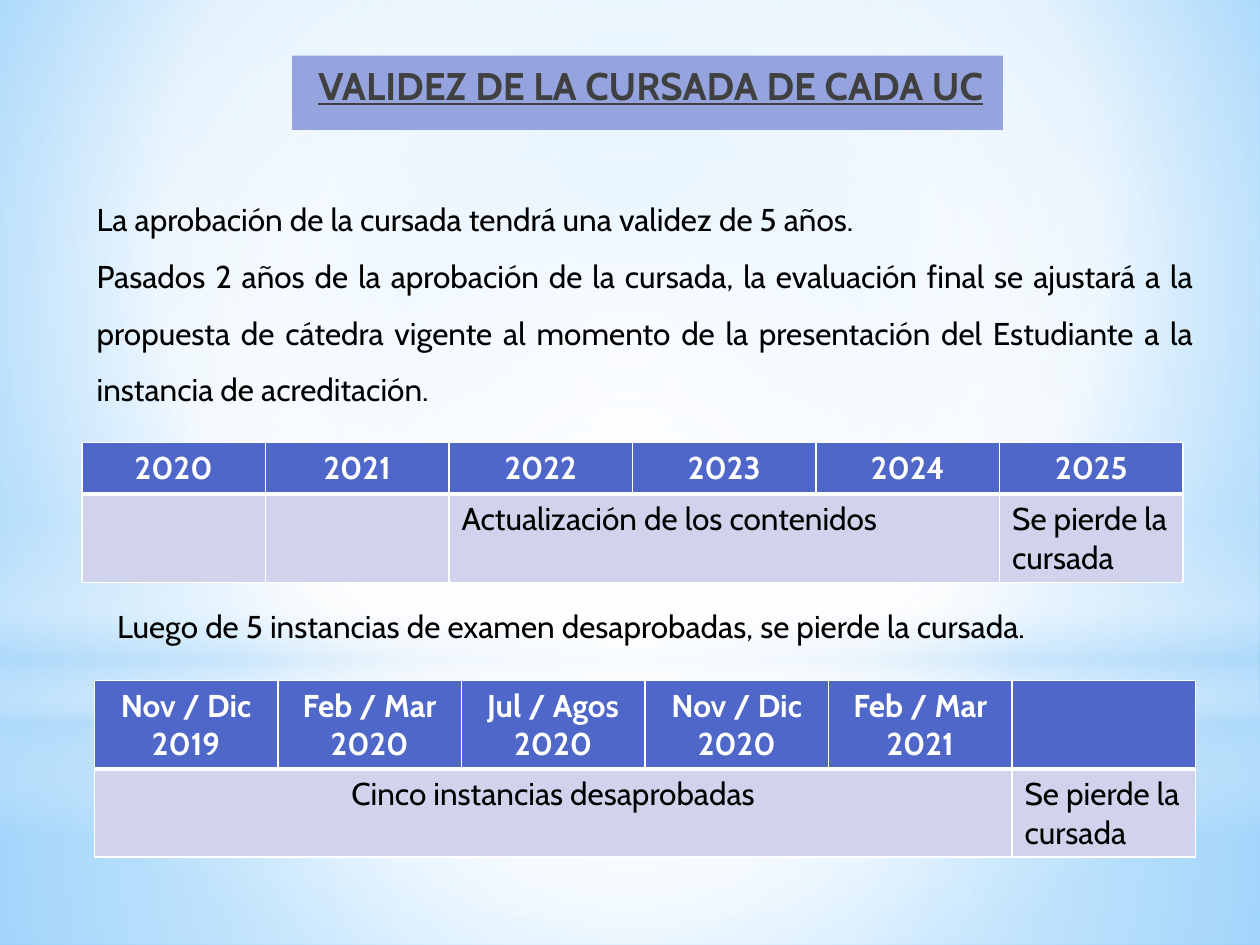
from lxml.etree import SubElement
from pptx import Presentation
from pptx.dml.color import RGBColor
from pptx.enum.shapes import MSO_SHAPE as Preset
from pptx.enum.text import MSO_ANCHOR as Anchor, MSO_AUTO_SIZE as AutoSize, PP_ALIGN as Align
from pptx.oxml.ns import qn
from pptx.util import Cm, Pt

WIDTH, HEIGHT = 25.4, 19.05
HORIZON = 14.17
CENTER = (50, 50, 50, 50)
COLUMN = 3.7


def color(hex_text):
    return RGBColor.from_string(hex_text)


def set_gradient(parent, stops, focus=None, angle=90):
    """Fill in stops of (position, colour, opacity); focus makes it radial."""
    gradient = next(parent.iter(qn("a:gradFill")))
    for child in list(gradient):
        gradient.remove(child)
    stop_list = SubElement(gradient, qn("a:gsLst"))
    for position, hex_text, opacity in stops:
        stop = SubElement(stop_list, qn("a:gs"), pos=str(position * 1000))
        tint = SubElement(stop, qn("a:srgbClr"), val=hex_text)
        if opacity < 100:
            SubElement(tint, qn("a:alpha"), val=str(opacity * 1000))
    if focus:
        radial = SubElement(gradient, qn("a:path"), path="circle")
        sides = {side: str(share * 1000) for side, share in zip("ltrb", focus)}
        SubElement(radial, qn("a:fillToRect"), **sides)
    else:
        SubElement(gradient, qn("a:lin"), ang=str(angle * 60000), scaled="0")


def set_borders(cell, **widths):
    properties = cell._tc.get_or_add_tcPr()
    for side in "LRTB":
        width = Pt(widths.get(side, 1))
        line = SubElement(properties, qn("a:ln" + side), w=str(width))
        fill = SubElement(line, qn("a:solidFill"))
        SubElement(fill, qn("a:srgbClr"), val="FFFFFF")


class SlideBuilder:
    text_style = {"name": "Cabin", "size": Pt(18), "bold": False}
    header_fill, body_fill = "4E67C8", "D0D3EB"

    def __init__(self, slide):
        self.slide = slide

    def styled_run(self, paragraph, text, hex_text="000000", **changes):
        run = paragraph.add_run()
        run.text = text
        for name, value in {**self.text_style, **changes}.items():
            setattr(run.font, name, value)
        run.font.color.rgb = color(hex_text)

    def background(self, stops, focus):
        self.slide.background.fill.gradient()
        set_gradient(self.slide._element, stops, focus)

    def glow(self, preset, top, height, stops, focus=None):
        shape = self.slide.shapes.add_shape(preset, 0, Cm(top), Cm(WIDTH), Cm(height))
        shape.shadow.inherit = False
        shape.line.fill.background()
        shape.fill.gradient()
        set_gradient(shape._element.spPr, stops, focus)

    def title(self, text, left, top, width, height):
        title = self.slide.shapes.title
        self.slide.shapes._spTree.append(title._element)  # in front of the glows
        box = {"left": left, "top": top, "width": width, "height": height}
        for name, value in box.items():
            setattr(title, name, Cm(value))
        title.fill.solid()
        title.fill.fore_color.rgb = color("95A4DE")
        frame = title.text_frame
        frame.vertical_anchor = Anchor.TOP
        frame.auto_size = AutoSize.NONE
        frame.margin_left = Cm(0.38)
        paragraph = frame.paragraphs[0]
        paragraph.alignment = Align.CENTER
        self.styled_run(paragraph, text, "404040", size=Pt(22), bold=True, underline=True)

    def text(self, lines, left, top, width, height, **paragraph_format):
        box = self.slide.shapes.add_textbox(Cm(left), Cm(top), Cm(width), Cm(height))
        frame = box.text_frame
        frame.word_wrap = True
        frame.auto_size = AutoSize.SHAPE_TO_FIT_TEXT
        for index, line in enumerate(lines):
            paragraph = frame.add_paragraph() if index else frame.paragraphs[0]
            for name, value in paragraph_format.items():
                setattr(paragraph, name, value)
            self.styled_run(paragraph, line)

    def table(self, headers, entries, left, top, row_heights):
        """Entries are (first column, last column, text, alignment) of the second row."""
        count = len(headers)
        frame = self.slide.shapes.add_table(
            2, count, Cm(left), Cm(top), Cm(COLUMN * count), Cm(sum(row_heights)))
        table = frame.table
        for row, height in zip(table.rows, row_heights):
            row.height = Cm(height)
        for index, header in enumerate(headers):
            table.columns[index].width = Cm(COLUMN)
            head, body = table.cell(0, index), table.cell(1, index)
            set_borders(head, B=3)
            set_borders(body, T=3)
            for cell, hex_text in ((head, self.header_fill), (body, self.body_fill)):
                cell.fill.solid()
                cell.fill.fore_color.rgb = color(hex_text)
            if header:
                paragraph = head.text_frame.paragraphs[0]
                paragraph.alignment = Align.CENTER
                self.styled_run(paragraph, header, "FFFFFF", bold=True)
        for first, last, text, alignment in entries:
            cell = table.cell(1, first)
            if last > first:
                cell.merge(table.cell(1, last))
            paragraph = cell.text_frame.paragraphs[0]
            paragraph.alignment = alignment
            self.styled_run(paragraph, text)


def main():
    presentation = Presentation()
    presentation.slide_width, presentation.slide_height = Cm(WIDTH), Cm(HEIGHT)
    builder = SlideBuilder(presentation.slides.add_slide(presentation.slide_layouts[5]))

    builder.background(
        [(0, "9ED5FF", 100), (60, "FFFFFF", 100), (100, "5BB9FF", 100)], (20, 10, 20, 60))
    builder.glow(Preset.RECTANGLE, HORIZON, HEIGHT - HORIZON,
                 [(0, "FFFFFF", 91), (37, "FFFFFF", 76), (100, "B4DCFA", 79)], CENTER)
    builder.glow(Preset.RECTANGLE, 0, HORIZON,
                 [(0, "FFFFFF", 89), (48, "FFFFFF", 62), (100, "B4DCFA", 79)], CENTER)
    builder.glow(Preset.RECTANGLE, 10.46, 6.35,
                 [(0, "FFFFFF", 0), (29, "FFFFFF", 30), (45, "B4DCFA", 40),
                  (55, "FFFFFF", 26), (65, "B4DCFA", 60), (100, "FFFFFF", 0)])
    builder.glow(Preset.OVAL, 4.45, HORIZON,
                 [(0, "FFFFFF", 100), (56, "FFFFFF", 0)], CENTER)

    builder.title("VALIDEZ DE LA CURSADA DE CADA UC", 5.89, 1.12, 14.33, 1.5)
    builder.text(
        ["La aprobación de la cursada tendrá una validez de 5 años.",
         "Pasados 2 años de la aprobación de la cursada, la evaluación final se ajustará "
         "a la propuesta de cátedra vigente al momento de la presentación del Estudiante "
         "a la instancia de acreditación."],
        1.7, 3.53, 22.61, 4.88, alignment=Align.JUSTIFY, line_spacing=1.5)
    lost = (5, 5, "Se pierde la cursada", Align.LEFT)
    builder.table([str(year) for year in range(2020, 2026)],
                  [(2, 4, "Actualización de los contenidos", Align.LEFT), lost],
                  1.65, 8.92, (1.04, 1.78))
    builder.text(["Luego de 5 instancias de examen desaprobadas, se pierde la cursada."],
                 2.11, 12.12, 21.79, 1.02)
    builder.table(["Nov / Dic 2019", "Feb / Mar 2020", "Jul / Agos 2020",
                   "Nov / Dic 2020", "Feb / Mar 2021", ""],
                  [(0, 4, "Cinco instancias desaprobadas", Align.CENTER), lost],
                  1.9, 13.72, (1.78, 1.78))
    presentation.save("out.pptx")


if __name__ == "__main__":
    main()
